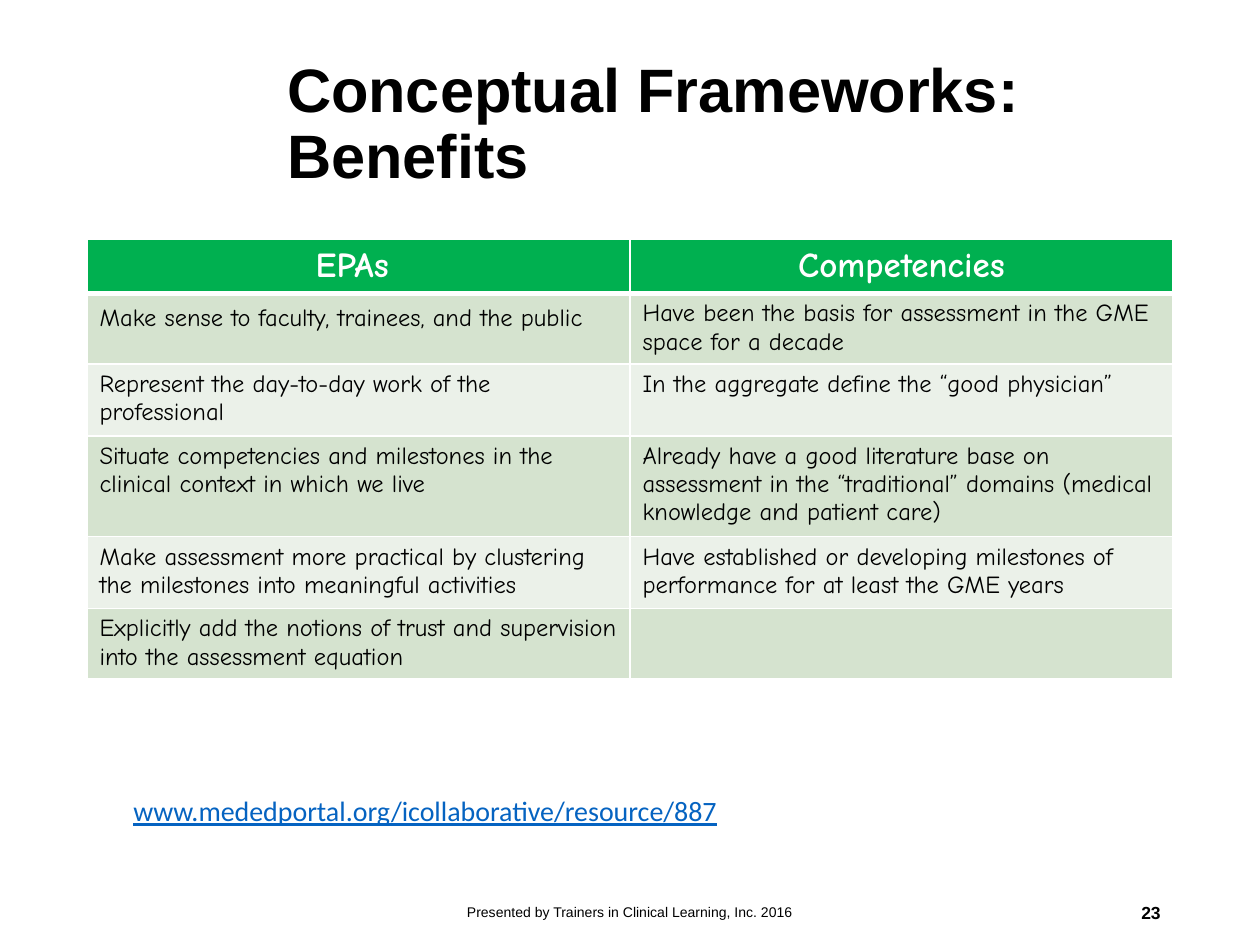
"""Build the slide on the benefits of two conceptual frameworks."""
import pptx
import pptx.util
import pptx.dml.color
import pptx.enum.text
import pptx.oxml
import pptx.oxml.ns

Inches = pptx.util.Inches
Pt = pptx.util.Pt
Align = pptx.enum.text.PP_ALIGN
Anchor = pptx.enum.text.MSO_ANCHOR
HUES = {"head": "00B050", "odd": "D5E3CF", "even": "EBF1E9",
        "white": "FFFFFF", "black": "000000", "link": "0563C1"}


def write(para, text, size, font, hue="black", bold=False, align=Align.LEFT):
    para.alignment = align
    run = para.add_run()
    run.text = text
    run.font.size = Pt(size)
    run.font.name = font
    run.font.bold = bold
    run.font.color.rgb = pptx.dml.color.RGBColor.from_string(HUES[hue])
    return run


def edge(cell, widths):
    props = cell._tc.get_or_add_tcPr()
    for spot, (side, width) in enumerate(zip("LRTB", widths)):
        props.insert(spot, pptx.oxml.parse_xml(
            f'<a:ln{side} {pptx.oxml.ns.nsdecls("a")} w="{Pt(width)}"><a:solidFill>'
            f'<a:srgbClr val="{HUES["white"]}"/></a:solidFill></a:ln{side}>'))


deck = pptx.Presentation()
deck.slide_width = Inches(10)
deck.slide_height = Inches(7.5)
slide = deck.slides.add_slide(deck.slide_layouts[6])

rows = [
    (0.43, "EPAs ", "Competencies"),
    (0.56, "Make sense to faculty, trainees, and the public",
     "Have been the basis for assessment in the GME space for a decade"),
    (0.57, "Represent the day-to-day work of the professional",
     "In the aggregate define the “good physician”"),
    (0.8, "Situate competencies and milestones in the clinical context in which we live",
     "Already have a good literature base on assessment in the “traditional” "
     "domains (medical knowledge and patient care)"),
    (0.57, "Make assessment more practical by clustering the milestones into meaningful activities",
     "Have established or developing milestones of performance for at least the GME years"),
    (0.56, "Explicitly add the notions of trust and supervision into the assessment equation", ""),
]
high = sum(row[0] for row in rows)
grid = slide.shapes.add_table(len(rows), 2, Inches(0.69), Inches(1.9),
                              Inches(8.62), Inches(high)).table
for i, (tall, *texts) in enumerate(rows):
    grid.rows[i].height = Inches(tall)
    for j, text in enumerate(texts):
        cell = grid.cell(i, j)
        hue = "head" if i == 0 else "odd" if i % 2 else "even"
        cell.fill.solid()
        cell.fill.fore_color.rgb = pptx.dml.color.RGBColor.from_string(HUES[hue])
        edge(cell, (1, 1, 3 if i == 1 else 1, 3 if i == 0 else 1))
        para = cell.text_frame.paragraphs[0]
        if i == 0:
            write(para, text, 20, "Comic Neue", "white", True, Align.CENTER)
        elif text:
            write(para, text, 14, "Comic Neue")
first = grid.cell(1, 0).text_frame.paragraphs[0]
first.line_spacing = 1.15
first.space_after = Pt(10)

boxes = [
    ((2.18, 0.27, 7.14, 1.45), "Conceptual Frameworks: Benefits",
     35, "Arial", "black", True, Align.LEFT, Anchor.MIDDLE),
    ((3.31, 7.04, 3.38, 0.4), "Presented by Trainers in Clinical Learning, Inc. 2016",
     8, "Arial", "black", False, Align.CENTER, Anchor.MIDDLE),
    ((0.96, 6.25, 4.9, 0.67), "www.mededportal.org/icollaborative/resource/887",
     16, "Calibri", "link", False, Align.LEFT, Anchor.TOP),
    ((7.06, 7.04, 2.25, 0.4), "23",
     10, "Arial", "black", True, Align.RIGHT, Anchor.MIDDLE),
]
for place, text, size, font, hue, bold, align, anchor in boxes:
    frame = slide.shapes.add_textbox(*map(Inches, place)).text_frame
    frame.word_wrap = hue != "link"
    frame.vertical_anchor = anchor
    para = frame.paragraphs[0]
    run = write(para, text, size, font, hue, bold, align)
    if hue == "link":
        run.font.underline = True
    if size == 35:
        para.line_spacing = 0.9

deck.save("out.pptx")
